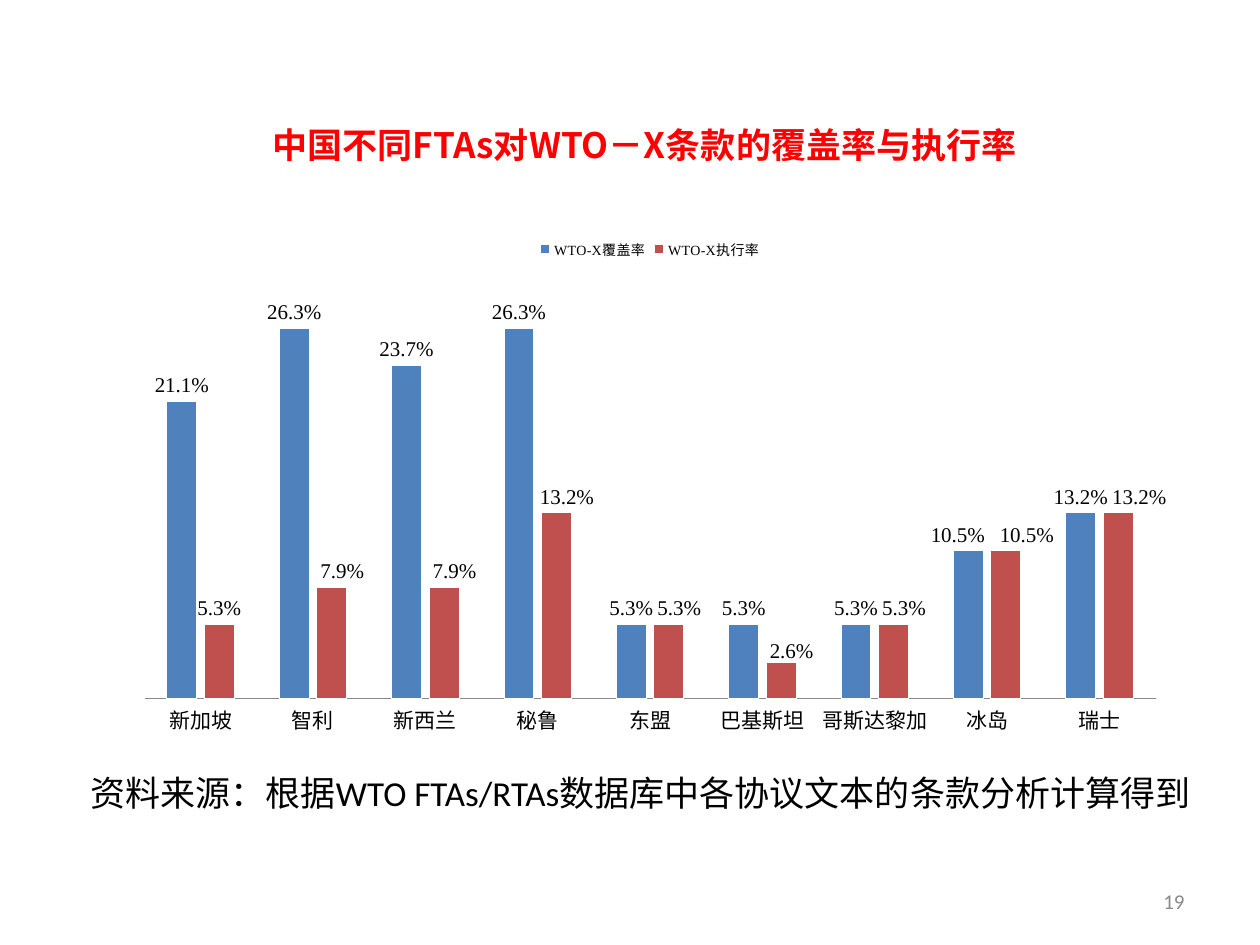
from lxml.etree import SubElement
from pptx import Presentation
from pptx.chart.data import CategoryChartData
from pptx.dml.color import RGBColor
from pptx.enum.chart import XL_CHART_TYPE, XL_LABEL_POSITION, XL_LEGEND_POSITION, XL_TICK_MARK
from pptx.enum.text import MSO_ANCHOR, MSO_AUTO_SIZE, PP_ALIGN
from pptx.oxml import parse_xml
from pptx.oxml.ns import nsdecls, qn
from pptx.util import Emu, Pt

PX = 9144  # 100 px to the inch
COLORS = {"text": "000000", "title": "FF0000", "muted": "898989", "axis": "898989",
          "cover": "4F81BD", "enforce": "C0504D", "edge": "FFFFFF"}
SANS, SERIF, CJK = "Calibri", "Times New Roman", "Noto Sans CJK SC"
HANGING = 38

COUNTRIES = ["新加坡", "智利", "新西兰", "秘鲁", "东盟", "巴基斯坦", "哥斯达黎加", "冰岛", "瑞士"]
# name, colour, values, label shifts {point: (x, y)} as fractions of the chart
SERIES = [
    ("WTO-X覆盖率", "cover",
     [0.211, 0.263, 0.237, 0.263, 0.053, 0.053, 0.053, 0.105, 0.132],
     {7: (-0.01, 0)}),
    ("WTO-X执行率", "enforce",
     [0.053, 0.079, 0.079, 0.132, 0.053, 0.026, 0.053, 0.105, 0.132],
     {1: (0.01, 0), 2: (0.01, 0), 3: (0.01, 0), 4: (0.01, 0), 5: (0.01, 0.01),
      6: (0.01, 0), 7: (0.02, 0), 8: (0.02, 0)}),
]


def rgb(name):
    return RGBColor.from_string(COLORS[name])


def manual_layout(**values):
    """Build a c:layout element from manual layout settings."""
    items = "".join(f'<c:{key} val="{value}"/>' for key, value in values.items())
    return parse_xml(f'<c:layout {nsdecls("c")}><c:manualLayout>{items}'
                     '</c:manualLayout></c:layout>')


class SlideBuilder:
    def __init__(self, s):
        self.s = s

    def box(self, x, y, w, h):
        return [Emu(v * PX) for v in (x, y, w, h)]

    def font(self, font, size, name=SANS, color="text", bold=False):
        font.size, font.name, font.bold = Pt(size), name, bold
        font.color.rgb = rgb(color)

    def set_text(self, sp, text, size, align=PP_ALIGN.LEFT, anchor=MSO_ANCHOR.TOP,
                 hanging=0, **style):
        tf = sp.text_frame
        tf.word_wrap, tf.auto_size, tf.vertical_anchor = True, MSO_AUTO_SIZE.NONE, anchor
        tf.text = text
        p = tf.paragraphs[0]
        p.alignment = align
        if hanging:
            p.space_before = Pt(size * 0.2)
            pPr = p._p.get_or_add_pPr()
            pPr.set("marL", str(hanging * PX))
            pPr.set("indent", str(-hanging * PX))
        r = p.runs[0]
        self.font(r.font, size, **style)
        SubElement(r._r.get_or_add_rPr(), qn("a:ea")).set("typeface", CJK)

    def title(self, text, *box, **style):
        sp = self.s.shapes.title
        sp.left, sp.top, sp.width, sp.height = self.box(*box)
        self.set_text(sp, text, **style)

    def text(self, text, *box, **style):
        self.set_text(self.s.shapes.add_textbox(*self.box(*box)), text, **style)

    def column_chart(self, categories, series, *box):
        data = CategoryChartData(number_format="0.0%")
        data.categories = categories
        for name, _, values, _ in series:
            data.add_series(name, values)
        chart = self.s.shapes.add_chart(
            XL_CHART_TYPE.COLUMN_CLUSTERED, *self.box(*box), data).chart
        self.font(chart.font, 10)
        chart.has_title = False

        # Legend
        chart.has_legend = True
        chart.legend.position = XL_LEGEND_POSITION.TOP
        chart.legend.include_in_layout = False
        self.font(chart.legend.font, 8, SERIF)

        # Axes
        cat, val = chart.category_axis, chart.value_axis
        cat.major_tick_mark = XL_TICK_MARK.NONE
        cat.format.line.color.rgb = rgb("axis")
        self.font(cat.tick_labels.font, 12)
        val.minimum_scale, val.maximum_scale = 0, 0.3
        val.has_major_gridlines = val.visible = False

        # Columns and their labels
        plot = chart.plots[0]
        plot.gap_width, plot.overlap, plot.vary_by_categories = 150, -25, False
        for ser, (_, color, _, shifts) in zip(plot.series, series):
            ser.format.fill.solid()
            ser.format.fill.fore_color.rgb = rgb(color)
            ser.format.line.color.rgb = rgb("edge")
            labels = ser.data_labels
            labels.show_value = True
            labels.number_format, labels.number_format_is_linked = "0.0%", False
            labels.position = XL_LABEL_POSITION.OUTSIDE_END
            self.font(labels.font, 12, SERIF)
            for i, (dx, dy) in shifts.items():
                label = ser.points[i].data_label
                self.font(label.font, 12, SERIF)
                label.position = XL_LABEL_POSITION.OUTSIDE_END
                dLbl = ser._element.findall(f'.//{qn("c:dLbl")}')[-1]
                dLbl.find(qn("c:idx")).addnext(manual_layout(x=dx, y=dy))

        # Plot area
        area = plot._element.getparent()
        for old in area.findall(qn("c:layout")):
            area.remove(old)
        area.insert(0, manual_layout(layoutTarget="inner", xMode="edge", yMode="edge",
                                     x=0.02, y=0.1, w=0.96, h=0.81))


def main():
    prs = Presentation()
    prs.slide_width, prs.slide_height = Emu(1000 * PX), Emu(750 * PX)
    slide = SlideBuilder(prs.slides.add_slide(prs.slide_layouts[5]))

    # Chart
    slide.column_chart(COUNTRIES, SERIES, 98, 178, 836, 414)
    # Source note
    slide.text("资料来源：根据WTO FTAs/RTAs数据库中各协议文本的条款分析计算得到",
               62, 607, 900, 68, size=20, hanging=HANGING)
    # Title
    slide.title("中国不同FTAs对WTO－X条款的覆盖率与执行率", 109, 93, 805, 70, size=20,
                align=PP_ALIGN.CENTER, hanging=HANGING, name=CJK, color="title", bold=True)
    # Page number
    slide.text("19", 717, 695, 233, 40, size=12, align=PP_ALIGN.RIGHT,
               anchor=MSO_ANCHOR.MIDDLE, color="muted")

    prs.save("out.pptx")


if __name__ == "__main__":
    main()
